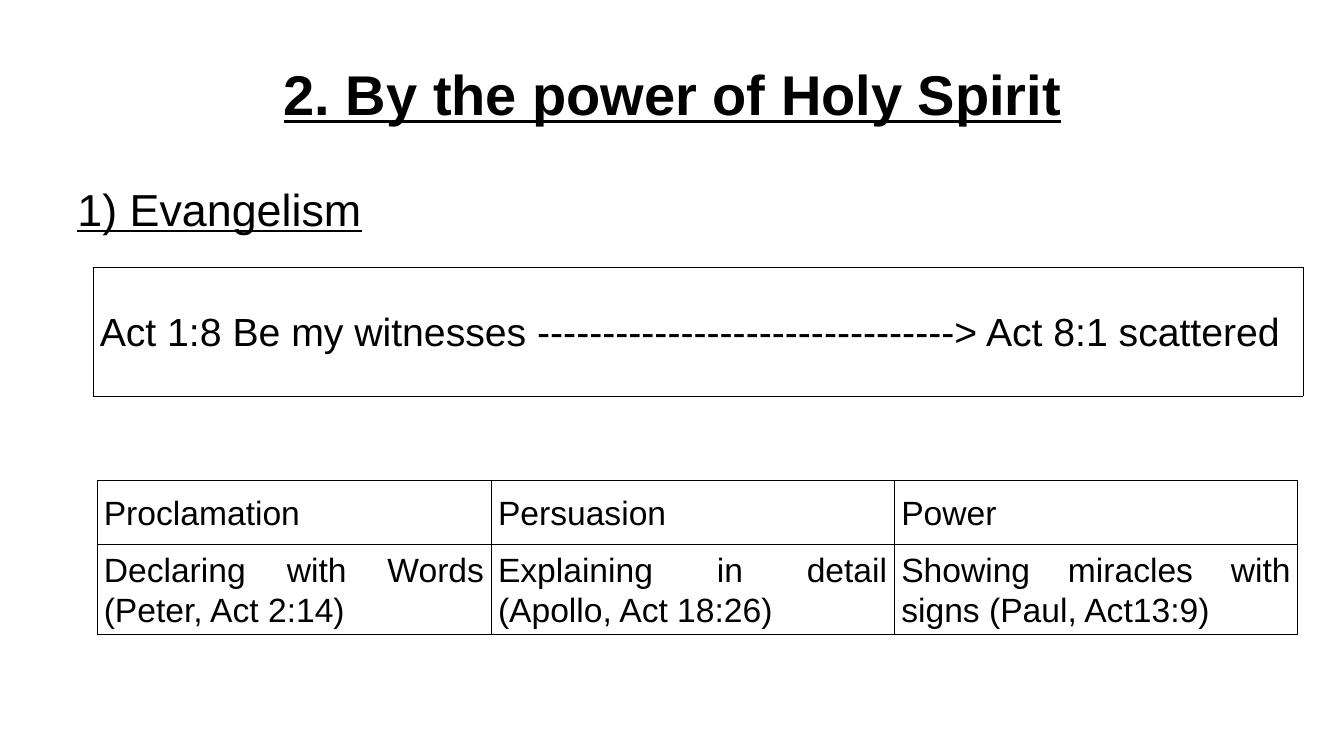
"""Builds a slide on evangelism by the power of the Holy Spirit."""
import pptx
import pptx.dml.color
import pptx.enum.text
import pptx.oxml
import pptx.oxml.ns
import pptx.util

Inches, Pt = pptx.util.Inches, pptx.util.Pt
ALIGN, ANCHOR = pptx.enum.text.PP_ALIGN, pptx.enum.text.MSO_ANCHOR

COLOURS = {"ink": "000000"}
FONT = "Arial"
BORDER_POINTS = 0.25

TITLE = "2. By the power of Holy Spirit"
HEADING = "1) Evangelism"
VERSES = {
    "rows": [["Act 1:8 Be my witnesses --------------------------------> Act 8:1 scattered "]],
    "left": 0.92, "top": 2.65, "widths": [12], "heights": [1.28], "size": 28,
}
METHODS = {
    "rows": [
        ["Proclamation", "Persuasion ", "Power"],
        ["Declaring with Words (Peter, Act 2:14)",
         "Explaining in detail (Apollo, Act 18:26)",
         "Showing miracles with signs (Paul, Act13:9)"],
    ],
    "left": 0.96, "top": 4.76, "widths": [3.91, 4, 4], "heights": [0.64, 0.88], "size": 24,
}


def style_font(paragraph, size, bold=False, underline=False):
    font = paragraph.font
    font.name, font.size = FONT, Pt(size)
    font.bold, font.underline = bold, underline
    font.color.rgb = pptx.dml.color.RGBColor.from_string(COLOURS["ink"])


def add_text(slide, text, box, size, anchor, align, bold=False, space_before=0):
    frame = slide.shapes.add_textbox(*map(Inches, box)).text_frame
    frame.word_wrap = True
    frame.vertical_anchor = anchor
    paragraph = frame.paragraphs[0]
    paragraph.text = text
    paragraph.alignment = align
    paragraph.space_before = Pt(space_before)
    style_font(paragraph, size, bold, underline=True)


def add_borders(cell):
    properties = cell._tc.get_or_add_tcPr()
    for position, side in enumerate(("lnL", "lnR", "lnT", "lnB")):
        properties.insert(position, pptx.oxml.parse_xml(
            f'<a:{side} {pptx.oxml.ns.nsdecls("a")} w="{Pt(BORDER_POINTS)}">'
            f'<a:solidFill><a:srgbClr val="{COLOURS["ink"]}"/></a:solidFill></a:{side}>'))


def fill_cell(cell, text, size):
    cell.margin_left = cell.margin_right = Inches(0.07)
    cell.margin_top = cell.margin_bottom = Inches(0.02)
    cell.vertical_anchor = ANCHOR.MIDDLE
    cell.fill.background()
    add_borders(cell)
    paragraph = cell.text_frame.paragraphs[0]
    paragraph.text = text
    paragraph.alignment = ALIGN.JUSTIFY
    paragraph.line_spacing = 1.07
    paragraph.space_after = Pt(8)
    style_font(paragraph, size)


def add_grid(slide, content):
    rows, widths, heights = content["rows"], content["widths"], content["heights"]
    box = content["left"], content["top"], sum(widths), sum(heights)
    table = slide.shapes.add_table(len(rows), len(widths), *map(Inches, box)).table
    table.first_row = table.horz_banding = False
    for column, width in zip(table.columns, widths):
        column.width = Inches(width)
    for row, height, texts in zip(table.rows, heights, rows):
        row.height = Inches(height)
        for cell, text in zip(row.cells, texts):
            fill_cell(cell, text, content["size"])


def main():
    deck = pptx.Presentation()
    deck.slide_width, deck.slide_height = Inches(13.33), Inches(7.5)
    slide = deck.slides.add_slide(deck.slide_layouts[6])
    add_text(slide, TITLE, (0.67, 0.3, 12, 1.25), 40, ANCHOR.MIDDLE, ALIGN.CENTER, bold=True)
    add_text(slide, HEADING, (0.67, 1.75, 12, 0.75), 32, ANCHOR.TOP, ALIGN.LEFT, space_before=4)
    for content in (VERSES, METHODS):
        add_grid(slide, content)
    deck.save("out.pptx")


if __name__ == "__main__":
    main()
